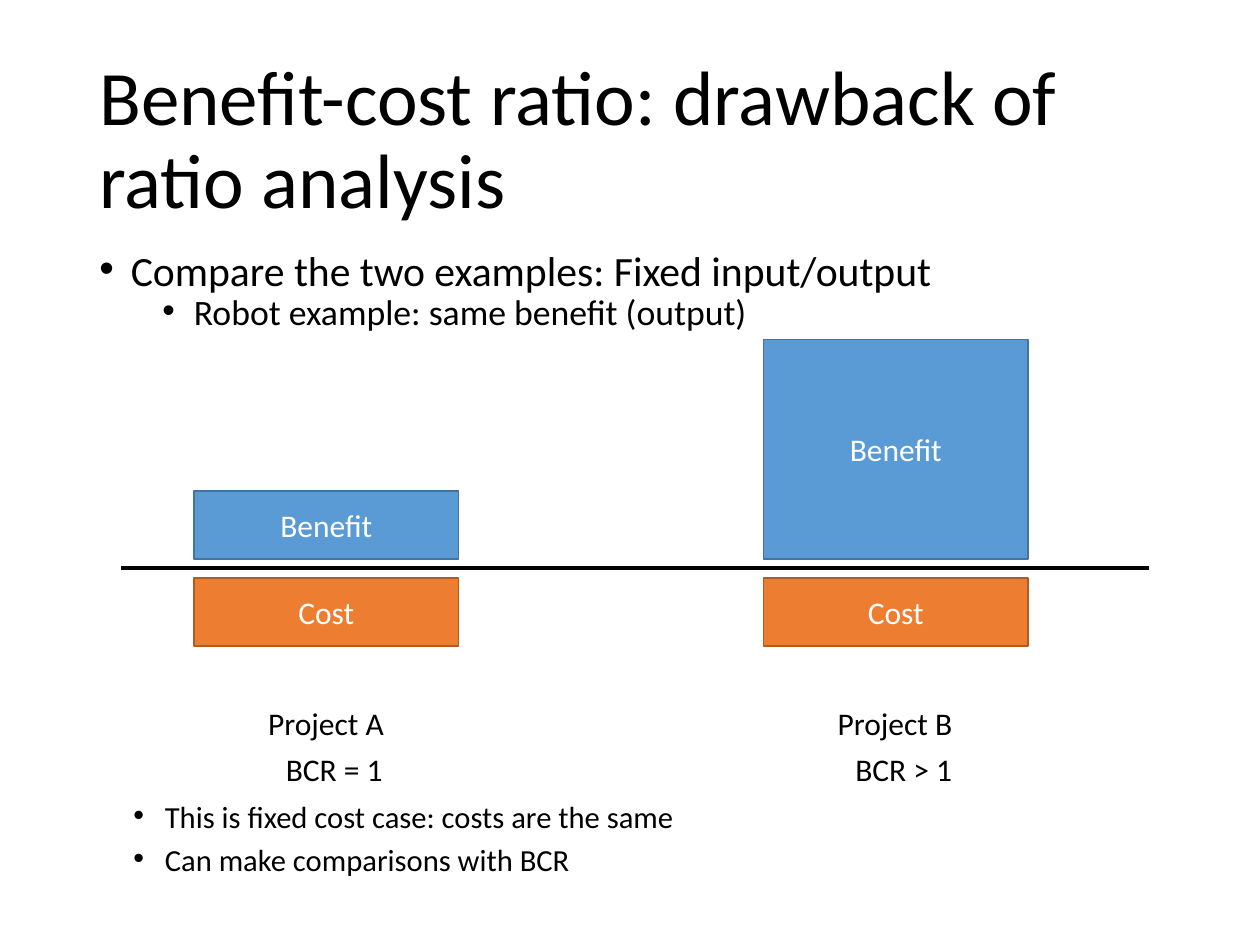
from pptx import Presentation
from pptx.util import Inches, Pt
from pptx.dml.color import RGBColor as RGB
from pptx.enum.shapes import MSO_SHAPE as Shape, MSO_CONNECTOR as Conn
from pptx.enum.text import MSO_ANCHOR as Anchor, PP_ALIGN as Align
from pptx.oxml.ns import qn
from lxml.etree import SubElement

THEME = {
    "font": "Calibri", "ink": "000000", "white": "FFFFFF",
    "title": 44, "lead": 23.8, "sub": 20.4, "label": 18, "note": 17.5,
    "Benefit": ("5B9BD5", "43739E"), "Cost": ("ED7D31", "AF5C24"),
}
TITLE = "Benefit-cost ratio: drawback of ratio analysis"
LEAD = [
    ("Compare the two examples: Fixed input/output", "lead", 0),
    ("Robot example: same benefit (output)", "sub", 1),
]
NOTES = [
    ("This is fixed cost case: costs are the same", "note", 0),
    ("Can make comparisons with BCR", "note", 0),
]
PROJECTS = [
    ("Project A", "BCR = 1", 1.54, 0.54),
    ("Project B", "BCR > 1", 6.06, 1.74),
]
AXIS, GAP, WIDE, COST = 4.51, 0.075, 2.1, 0.54

deck = Presentation()
deck.slide_width, deck.slide_height = Inches(10), Inches(7.5)
slide = deck.slides.add_slide(deck.slide_layouts[6])
shapes = slide.shapes


def style(para, size, color="ink"):
    font = para.font
    font.name, font.size = THEME["font"], Pt(THEME[size])
    font.color.rgb = RGB.from_string(THEME[color])


def add_text(text, size, x, y, w, h, wrap=True):
    frame = shapes.add_textbox(*map(Inches, (x, y, w, h))).text_frame
    frame.word_wrap = wrap
    para = frame.paragraphs[0]
    para.text = text
    style(para, size)
    return frame


def add_list(items, x, y):
    frame = add_text("", "lead", x, y, 8.62, 0.7)
    for i, (text, size, level) in enumerate(items):
        para = frame.add_paragraph() if i else frame.paragraphs[0]
        para.text, para.level = text, level
        para.line_spacing, para.space_before = 0.7, Pt(5 if level else 10)
        style(para, size)
        props = para._p.get_or_add_pPr()
        props.set("marL", str(Inches(0.25 + 0.5 * level)))
        props.set("indent", str(Inches(-0.25)))
        SubElement(props, qn("a:buFont"), typeface="Arial")
        SubElement(props, qn("a:buChar"), char="•")


def add_bar(name, x, y, h):
    bar = shapes.add_shape(Shape.RECTANGLE, *map(Inches, (x, y, WIDE, h)))
    fill, edge = THEME[name]
    bar.shadow.inherit = False
    bar.fill.solid()
    bar.fill.fore_color.rgb = RGB.from_string(fill)
    bar.line.color.rgb = RGB.from_string(edge)
    bar.line.width = Pt(1)
    frame = bar.text_frame
    frame.vertical_anchor = Anchor.MIDDLE
    para = frame.paragraphs[0]
    para.text, para.alignment = name, Align.CENTER
    style(para, "label", "white")


head = add_text(TITLE, "title", 0.69, 0.4, 8.62, 1.45)
head.vertical_anchor = Anchor.MIDDLE
head.paragraphs[0].line_spacing = 0.9
add_list(LEAD, 0.69, 2)

for name, ratio, x, gain in PROJECTS:
    add_bar("Benefit", x, AXIS - GAP - gain, gain)
    add_bar("Cost", x, AXIS + GAP, COST)
    add_text(name, "label", x + 0.49, 5.54, 1.13, 0.4, False)
    add_text(ratio, "label", x + 0.63, 5.9, 0.98, 0.4, False)

axis = shapes.add_connector(Conn.STRAIGHT, *map(Inches, (0.96, AXIS, 9.12, AXIS)))
axis.line.color.rgb = RGB.from_string(THEME["ink"])
axis.line.width = Pt(2.25)
SubElement(axis._element.spPr, qn("a:effectLst"))

add_list(NOTES, 0.96, 6.36)
deck.save("out.pptx")
